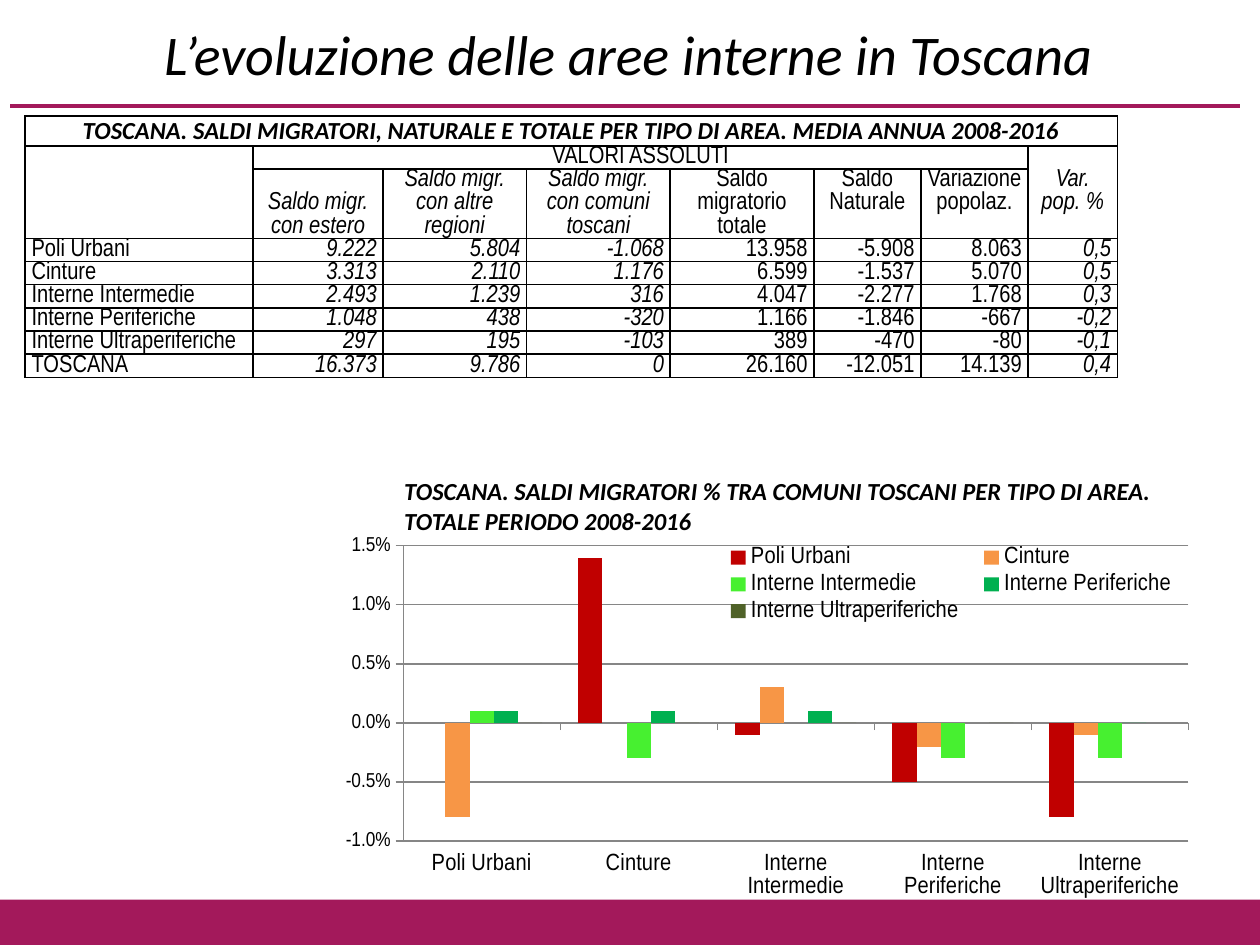
import pptx
import pptx.util
import pptx.dml.color
import pptx.chart.data
import pptx.enum.chart
import pptx.enum.shapes
import pptx.enum.text
import pptx.oxml
import pptx.oxml.ns

Inches = pptx.util.Inches
Pt = pptx.util.Pt
ALIGN = pptx.enum.text.PP_ALIGN
ANCHOR = pptx.enum.text.MSO_ANCHOR
qn = pptx.oxml.ns.qn

HUES = {"ink": "000000", "band": "A3195B", "grid": "868686"}
BARS = {
    "Poli Urbani": ("C00000", [None, 0.014, -0.001, -0.005, -0.008]),
    "Cinture": ("F79646", [-0.008, None, 0.003, -0.002, -0.001]),
    "Interne Intermedie": ("47F030", [0.001, -0.003, None, -0.003, -0.003]),
    "Interne Periferiche": ("00B050", [0.001, 0.001, 0.001, None, 0]),
    "Interne Ultraperiferiche": ("4F6228", [0, 0, 0, 0, None]),
}
WIDTHS = [1.81, 1.03, 1.14, 1.14, 1.14, 0.85, 0.85, 0.71]
SLANT = (1, 2, 3, 7)
HEADS = ["Saldo migr. con estero", "Saldo migr. con altre regioni",
         "Saldo migr. con comuni toscani", "Saldo migratorio totale",
         "Saldo\nNaturale", "Variazione popolaz."]
ROWS = [
    ["Poli Urbani", "9.222", "5.804", "-1.068", "13.958", "-5.908", "8.063", "0,5"],
    ["Cinture", "3.313", "2.110", "1.176", "6.599", "-1.537", "5.070", "0,5"],
    ["Interne Intermedie", "2.493", "1.239", "316", "4.047", "-2.277", "1.768", "0,3"],
    ["Interne Periferiche", "1.048", "438", "-320", "1.166", "-1.846", "-667", "-0,2"],
    ["Interne Ultraperiferiche", "297", "195", "-103", "389", "-470", "-80", "-0,1"],
    ["TOSCANA", "16.373", "9.786", "0", "26.160", "-12.051", "14.139", "0,4"],
]
HEAVY = {"name": "Calibri", "size": Pt(14), "bold": True, "italic": True}
PLAIN = {"name": "Arial Narrow", "size": Pt(14), "bold": False, "italic": False}


def tint(key):
    return pptx.dml.color.RGBColor.from_string(HUES.get(key, key))


def apply(thing, **vals):
    for key, val in vals.items():
        setattr(thing, key, val)


def style(font, vals):
    apply(font, **vals)
    font.color.rgb = tint("ink")


def write(frame, text, vals, align):
    frame.text = text
    for para in frame.paragraphs:
        para.alignment = align
        for run in para.runs:
            style(run.font, vals)


def add_title(slide, box):
    title = slide.shapes.title
    apply(title, **dict(zip(("left", "top", "width", "height"), map(Inches, box))))
    frame = title.text_frame
    frame.vertical_anchor = ANCHOR.MIDDLE
    write(frame, "L’evoluzione delle aree interne in Toscana",
          {"name": "Calibri", "size": Pt(32), "italic": True}, ALIGN.CENTER)
    frame.paragraphs[0].line_spacing = 0.85


def add_bands(slide, rule, foot):
    line = slide.shapes.add_connector(
        pptx.enum.shapes.MSO_CONNECTOR.STRAIGHT, *map(Inches, rule))
    line.line.color.rgb = tint("band")
    line.line.width = Pt(2.5)
    props = line._element.spPr
    props.append(props.makeelement(qn("a:effectLst"), {}))
    bar = slide.shapes.add_shape(
        pptx.enum.shapes.MSO_SHAPE.RECTANGLE, *map(Inches, foot))
    bar.shadow.inherit = False
    bar.fill.solid()
    bar.fill.fore_color.rgb = tint("band")
    bar.line.fill.background()


def border(cell):
    props = cell._tc.get_or_add_tcPr()
    for spot, side in enumerate(("lnL", "lnR", "lnT", "lnB")):
        props.insert(spot, pptx.oxml.parse_xml(
            f'<a:{side} {pptx.oxml.ns.nsdecls("a")} w="12700"><a:solidFill>'
            f'<a:srgbClr val="{HUES["ink"]}"/></a:solidFill></a:{side}>'))


def add_grid(slide, box):
    grid = slide.shapes.add_table(9, 8, *map(Inches, box)).table
    apply(grid, first_row=False, horz_banding=False)
    for col, wide in zip(grid.columns, WIDTHS):
        col.width = Inches(wide)
    for row in grid.rows:
        row.height = Inches(0.18)
    for cell in grid.iter_cells():
        apply(cell, margin_left=Inches(0.05), margin_right=Inches(0.05),
              margin_top=0, margin_bottom=0, vertical_anchor=ANCHOR.BOTTOM)
        cell.fill.background()
        border(cell)
        para = cell.text_frame.paragraphs[0]._p
        para.append(para.makeelement(qn("a:endParaRPr"), {"sz": "1400"}))
    for start, end in (((0, 0), (0, 7)), ((1, 0), (2, 0)),
                       ((1, 1), (1, 6)), ((1, 7), (2, 7))):
        grid.cell(*start).merge(grid.cell(*end))

    def put(row, col, text, align, vals=None):
        vals = vals or {**PLAIN, "italic": col in SLANT}
        write(grid.cell(row, col).text_frame, text, vals, align)

    put(0, 0, "TOSCANA. SALDI MIGRATORI, NATURALE E TOTALE PER TIPO DI AREA. "
        "MEDIA ANNUA 2008-2016", ALIGN.CENTER, HEAVY)
    put(1, 1, "VALORI ASSOLUTI", ALIGN.CENTER, PLAIN)
    put(1, 7, "Var. pop. %", ALIGN.CENTER)
    grid.cell(1, 7).vertical_anchor = ANCHOR.MIDDLE
    for col, text in enumerate(HEADS, 1):
        put(2, col, text, ALIGN.CENTER)
        if col > 3:
            grid.cell(2, col).vertical_anchor = ANCHOR.TOP
    for row, texts in enumerate(ROWS, 3):
        for col, text in enumerate(texts):
            put(row, col, text, ALIGN.RIGHT if col else ALIGN.LEFT)


def lay(node, spot, box, inner=False):
    for old in node.findall(qn("c:layout")):
        node.remove(old)
    tags = [("layoutTarget", "inner")] if inner else []
    tags += [("xMode", "edge"), ("yMode", "edge"), *zip("xywh", box)]
    body = "".join(f'<c:{tag} val="{val}"/>' for tag, val in tags)
    node.insert(spot, pptx.oxml.parse_xml(
        f'<c:layout {pptx.oxml.ns.nsdecls("c")}>'
        f'<c:manualLayout>{body}</c:manualLayout></c:layout>'))


def add_bars(slide, box):
    enums = pptx.enum.chart
    data = pptx.chart.data.CategoryChartData(number_format="0.0%")
    data.categories = list(BARS)
    for name, (_, vals) in BARS.items():
        data.add_series(name, vals)
    chart = slide.shapes.add_chart(
        enums.XL_CHART_TYPE.COLUMN_CLUSTERED, *map(Inches, box), data).chart
    apply(chart, has_title=False, has_legend=True)
    style(chart.font, {"name": "Arial Narrow", "size": Pt(8)})
    plot = chart.plots[0]
    apply(plot, gap_width=150, overlap=0, vary_by_categories=False)
    for bar, (hue, _) in zip(plot.series, BARS.values()):
        bar.invert_if_negative = False
        bar.format.fill.solid()
        bar.format.fill.fore_color.rgb = tint(hue)
    cats, vals = chart.category_axis, chart.value_axis
    for axis, size in ((cats, 14), (vals, 12)):
        axis.major_tick_mark = enums.XL_TICK_MARK.OUTSIDE
        axis.format.line.color.rgb = tint("grid")
        style(axis.tick_labels.font, {"name": "Arial Narrow", "size": Pt(size)})
    cats.tick_label_position = enums.XL_TICK_LABEL_POSITION.LOW
    apply(vals, minimum_scale=-0.01, maximum_scale=0.015, major_unit=0.005,
          has_major_gridlines=True)
    vals.major_gridlines.format.line.color.rgb = tint("grid")
    apply(vals.tick_labels, number_format="0.0%", number_format_is_linked=False)
    key = chart.legend
    apply(key, position=enums.XL_LEGEND_POSITION.RIGHT, include_in_layout=False)
    style(key.font, {"name": "Arial Narrow", "size": Pt(14)})
    lay(key._element, 1, (0.43, 0.03, 0.55, 0.24))
    lay(chart._chartSpace.chart.plotArea, 0, (0.07, 0.04, 0.91, 0.84), True)


def add_label(slide, box):
    frame = slide.shapes.add_textbox(*map(Inches, box)).text_frame
    frame.word_wrap = True
    write(frame, "TOSCANA. SALDI MIGRATORI % TRA COMUNI TOSCANI PER TIPO DI AREA. "
          "TOTALE PERIODO 2008-2016", HEAVY, ALIGN.LEFT)


def main():
    deck = pptx.Presentation()
    apply(deck, slide_width=Inches(10), slide_height=Inches(7.5))
    slide = deck.slides.add_slide(deck.slide_layouts[5])
    add_bands(slide, (0.08, 0.84, 9.84, 0.84), (0, 7.14, 10, 0.36))
    add_title(slide, (0.49, -0.03, 9, 0.99))
    add_grid(slide, (0.2, 0.92, 8.66, 1.62))
    add_bars(slide, (2.72, 4.22, 6.85, 2.91))
    add_label(slide, (3.11, 3.73, 6.46, 0.57))
    deck.save("out.pptx")


if __name__ == "__main__":
    main()
